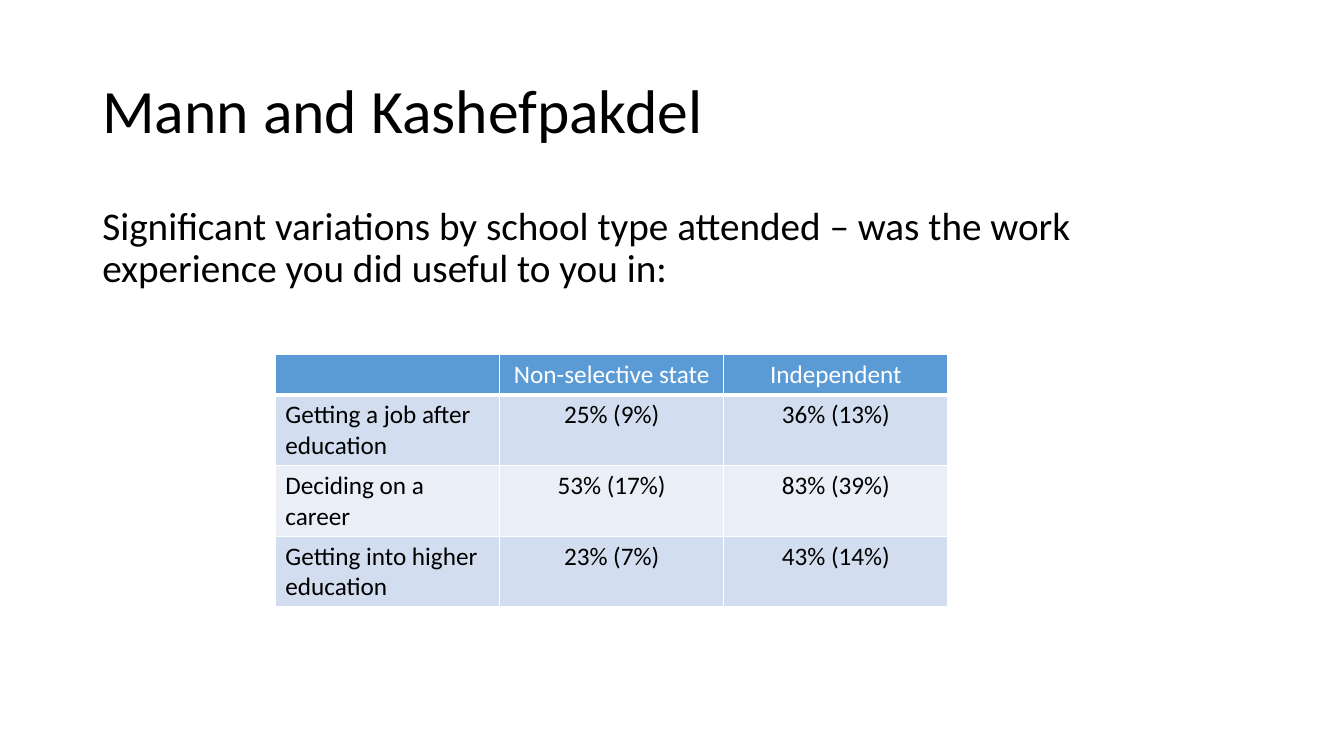
from dataclasses import dataclass

from lxml.etree import SubElement
from pptx import Presentation
from pptx.dml.color import RGBColor
from pptx.enum.text import MSO_ANCHOR, PP_ALIGN
from pptx.oxml.ns import qn
from pptx.util import Cm, Pt

FONT = "Calibri"
BLACK, WHITE = "000000", "FFFFFF"
HEADER_FILL = "5B9BD5"
BAND_FILLS = ("D2DEEF", "EAEFF7")
COLUMN_WIDTH, HEADER_HEIGHT, ROW_HEIGHT = 5.65, 1.03, 1.78  # cm

ROWS = (
    ("", "Non-selective state", "Independent"),
    ("Getting a job after education", "25% (9%)", "36% (13%)"),
    ("Deciding on a career", "53% (17%)", "83% (39%)"),
    ("Getting into higher education", "23% (7%)", "43% (14%)"),
)


@dataclass
class TextBlock:
    text: str
    top: float
    height: float
    size: int
    anchor: MSO_ANCHOR
    space_before: int


TEXT_BLOCKS = (
    TextBlock("Mann and Kashefpakdel", 1.01, 3.68, 44, MSO_ANCHOR.MIDDLE, 0),
    TextBlock("Significant variations by school type attended – was the work "
              "experience you did useful to you in:",
              5.07, 12.09, 28, MSO_ANCHOR.TOP, 10),
)


def rgb(color: str) -> RGBColor:
    return RGBColor.from_string(color)


def set_font(p, size: int, color: str) -> None:
    p.font.name = FONT
    p.font.size = Pt(size)
    p.font.bold = False
    p.font.color.rgb = rgb(color)


def add_text(s, block: TextBlock) -> None:
    sp = s.shapes.add_textbox(Cm(2.33), Cm(block.top), Cm(29.21), Cm(block.height))
    tf = sp.text_frame
    tf.word_wrap = True
    tf.vertical_anchor = block.anchor
    p = tf.paragraphs[0]
    p.text = block.text
    p.line_spacing = 0.9
    p.space_before = Pt(block.space_before)
    set_font(p, block.size, BLACK)


def set_borders(cell, bottom: int, top: int) -> None:
    tc_pr = cell._tc.get_or_add_tcPr()
    for side, width in (("L", 1), ("R", 1), ("T", top), ("B", bottom)):
        line = SubElement(tc_pr, qn(f"a:ln{side}"), w=str(Pt(width)))
        fill = SubElement(line, qn("a:solidFill"))
        SubElement(fill, qn("a:srgbClr"), val=WHITE)


def add_results_table(s) -> None:
    columns = len(ROWS[0])
    height = HEADER_HEIGHT + ROW_HEIGHT * (len(ROWS) - 1)
    table = s.shapes.add_table(len(ROWS), columns, Cm(6.94), Cm(8.92),
                               Cm(COLUMN_WIDTH * columns), Cm(height)).table
    for column in table.columns:
        column.width = Cm(COLUMN_WIDTH)
    for i, row in enumerate(ROWS):
        header = i == 0
        table.rows[i].height = Cm(HEADER_HEIGHT if header else ROW_HEIGHT)
        for j, text in enumerate(row):
            cell = table.cell(i, j)
            # Borders come before the fill in the cell properties
            set_borders(cell, bottom=3 if header else 1, top=3 if i == 1 else 1)
            cell.fill.solid()
            cell.fill.fore_color.rgb = rgb(HEADER_FILL if header else BAND_FILLS[(i - 1) % 2])
            p = cell.text_frame.paragraphs[0]
            p.text = text
            p.alignment = PP_ALIGN.CENTER if j else PP_ALIGN.LEFT
            set_font(p, 18, WHITE if header else BLACK)


def main() -> None:
    prs = Presentation()
    prs.slide_width, prs.slide_height = Cm(33.87), Cm(19.05)
    s = prs.slides.add_slide(prs.slide_layouts[6])

    # Title and question
    for block in TEXT_BLOCKS:
        add_text(s, block)

    # Answers by school type
    add_results_table(s)

    prs.save("out.pptx")


if __name__ == "__main__":
    main()
